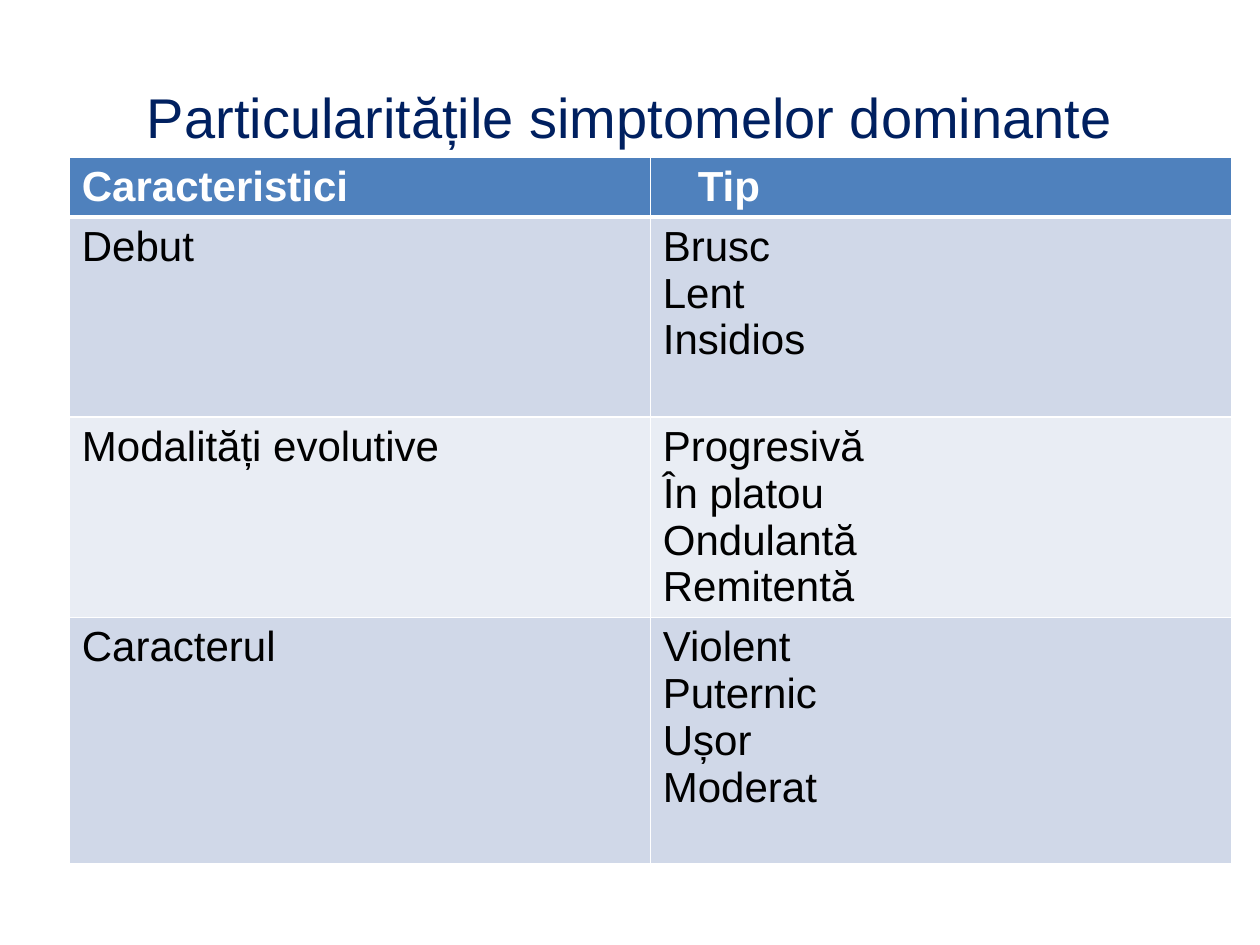
from dataclasses import dataclass

from lxml import etree
from pptx import Presentation
from pptx.dml.color import RGBColor
from pptx.enum import text
from pptx.oxml import ns
from pptx.util import Pt

NAVY = RGBColor(0x00, 0x20, 0x60)
BLUE = RGBColor(0x4F, 0x81, 0xBD)
BAND_DARK = RGBColor(0xD0, 0xD8, 0xE8)
BAND_LIGHT = RGBColor(0xE9, 0xED, 0xF4)
WHITE = RGBColor(0xFF, 0xFF, 0xFF)
BLACK = RGBColor(0x00, 0x00, 0x00)

LEFT, CENTER, JUSTIFY = (
    text.PP_ALIGN.LEFT, text.PP_ALIGN.CENTER, text.PP_ALIGN.JUSTIFY)
COLUMN_WIDTH = 332
TIP_INDENT = 20
CELL_MARGIN = 7.2


@dataclass
class Symptom:
    feature: str
    types: list[str]
    height: float


SYMPTOMS = [
    Symptom("Debut", ["Brusc", "Lent", "Insidios"], 114.4),
    Symptom("Modalități evolutive",
            ["Progresivă", "În platou", "Ondulantă", "Remitentă"], 114.4),
    Symptom("Caracterul", ["Violent", "Puternic", "Ușor", "Moderat"], 140.6),
]
HEADER_HEIGHT = 34


def write(tf, lines: list[str], *, size: float = 24, color=BLACK,
          bold: bool = False, align=LEFT) -> None:
    for i, line in enumerate(lines):
        p = tf.paragraphs[0] if i == 0 else tf.add_paragraph()
        p.alignment = align
        r = p.add_run()
        r.text = line
        r.font.name = "Arial"
        r.font.size = Pt(size)
        r.font.bold = bold
        r.font.color.rgb = color


def set_borders(cell, **widths: float) -> None:
    """Draw white borders; the keys are lnL, lnR, lnT and lnB, in points."""
    tc_pr = cell._tc.get_or_add_tcPr()
    for side, width in widths.items():
        ln = etree.SubElement(tc_pr, ns.qn(f"a:{side}"), w=str(Pt(width)))
        fill = etree.SubElement(ln, ns.qn("a:solidFill"))
        etree.SubElement(fill, ns.qn("a:srgbClr"), val=str(WHITE))


def style_cell(cell, fill, top: float = 1, bottom: float = 1) -> None:
    set_borders(cell, lnL=1, lnR=1, lnT=top, lnB=bottom)
    cell.fill.solid()
    cell.fill.fore_color.rgb = fill


def add_symptom_table(slide) -> None:
    heights = [HEADER_HEIGHT] + [s.height for s in SYMPTOMS]
    table = slide.shapes.add_table(
        len(heights), 2, Pt(39.6), Pt(90),
        Pt(2 * COLUMN_WIDTH), Pt(sum(heights))).table
    for column in table.columns:
        column.width = Pt(COLUMN_WIDTH)
    for row, height in zip(table.rows, heights):
        row.height = Pt(height)

    for col, heading in enumerate(["Caracteristici", "Tip"]):
        cell = table.cell(0, col)
        style_cell(cell, BLUE, bottom=3)
        write(cell.text_frame, [heading], color=WHITE, bold=True)
    table.cell(0, 1).margin_left = Pt(CELL_MARGIN + TIP_INDENT)

    for row, symptom in enumerate(SYMPTOMS, start=1):
        feature, types = table.cell(row, 0), table.cell(row, 1)
        for cell in (feature, types):
            style_cell(cell, BAND_DARK if row % 2 else BAND_LIGHT,
                       top=3 if row == 1 else 1)
        write(feature.text_frame, [symptom.feature])
        write(types.text_frame, symptom.types, align=JUSTIFY)


def main() -> None:
    prs = Presentation()
    prs.slide_width, prs.slide_height = Pt(720), Pt(540)
    slide = prs.slides.add_slide(prs.slide_layouts[5])

    title = slide.shapes.title
    title.left, title.top = Pt(36), Pt(21.6)
    title.width, title.height = Pt(648), Pt(90)
    title.text_frame.vertical_anchor = text.MSO_ANCHOR.MIDDLE
    write(title.text_frame, ["Particularitățile simptomelor dominante"],
          size=32, color=NAVY, align=CENTER)

    add_symptom_table(slide)
    prs.save("out.pptx")


if __name__ == "__main__":
    main()
